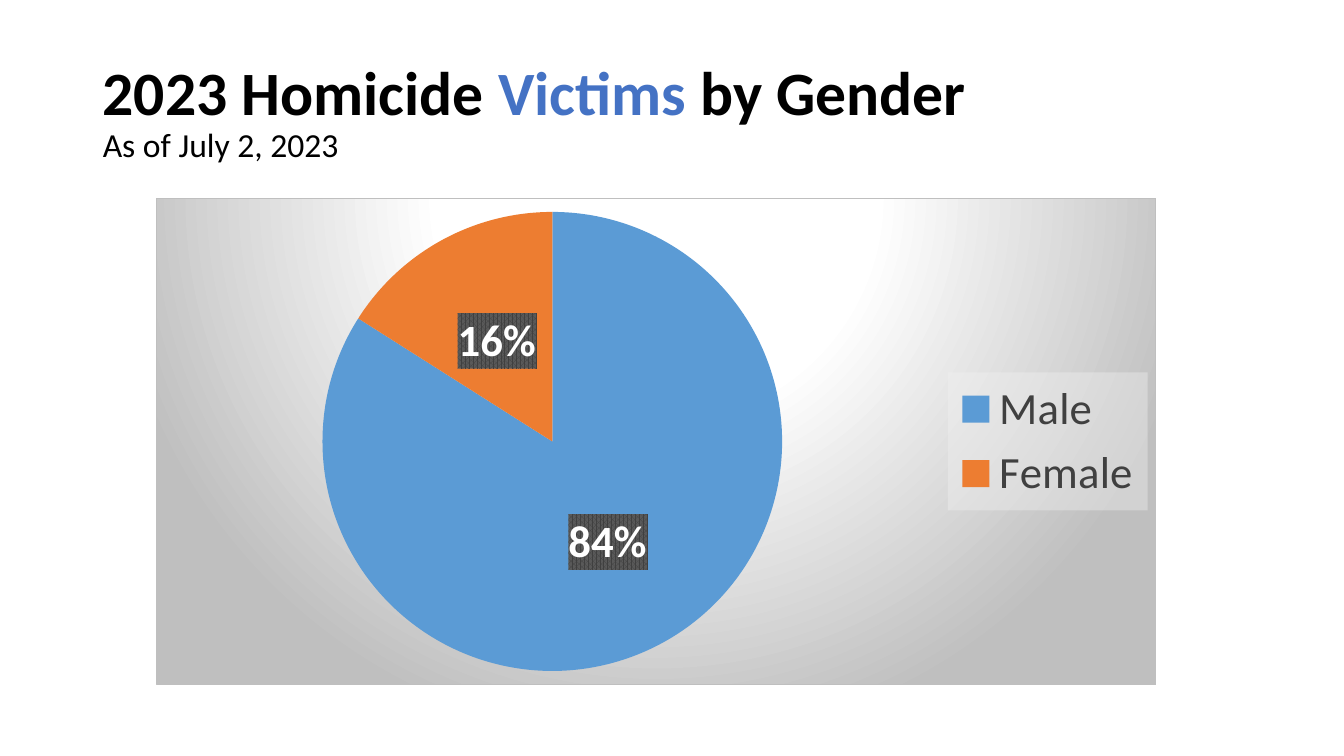
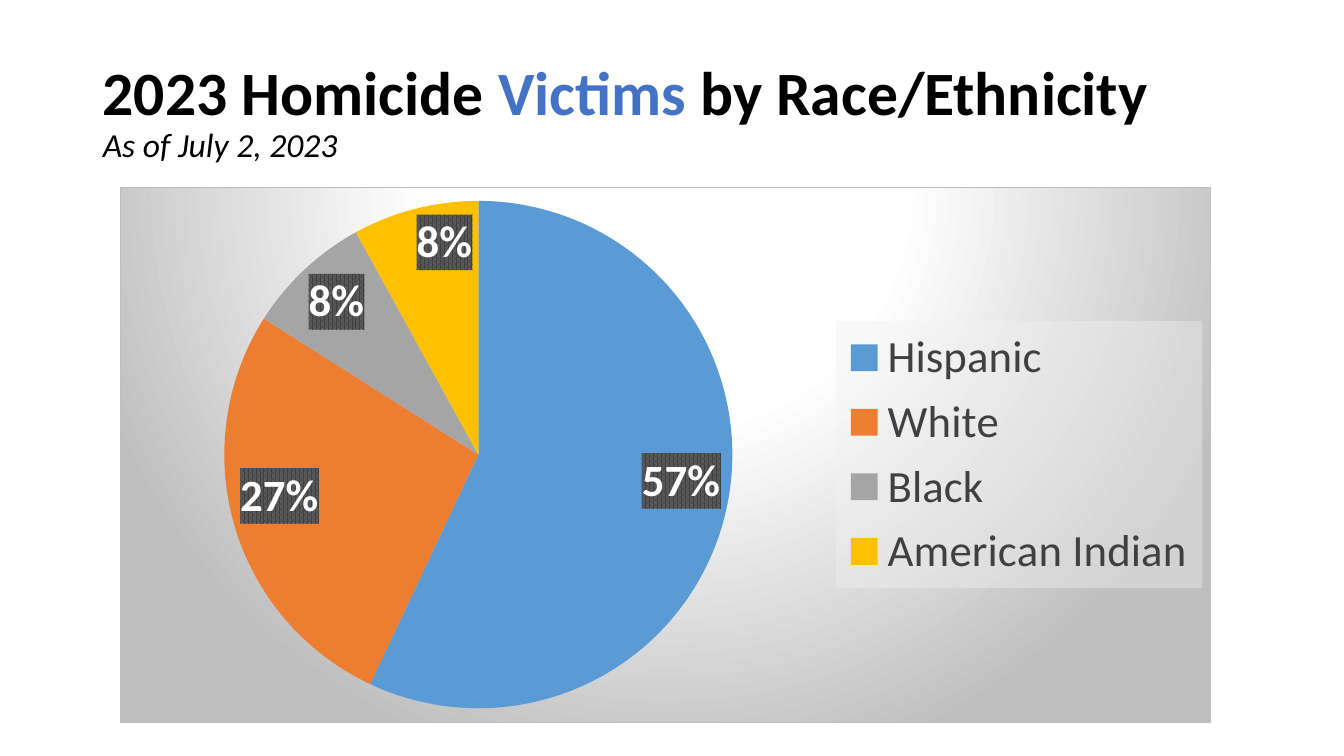
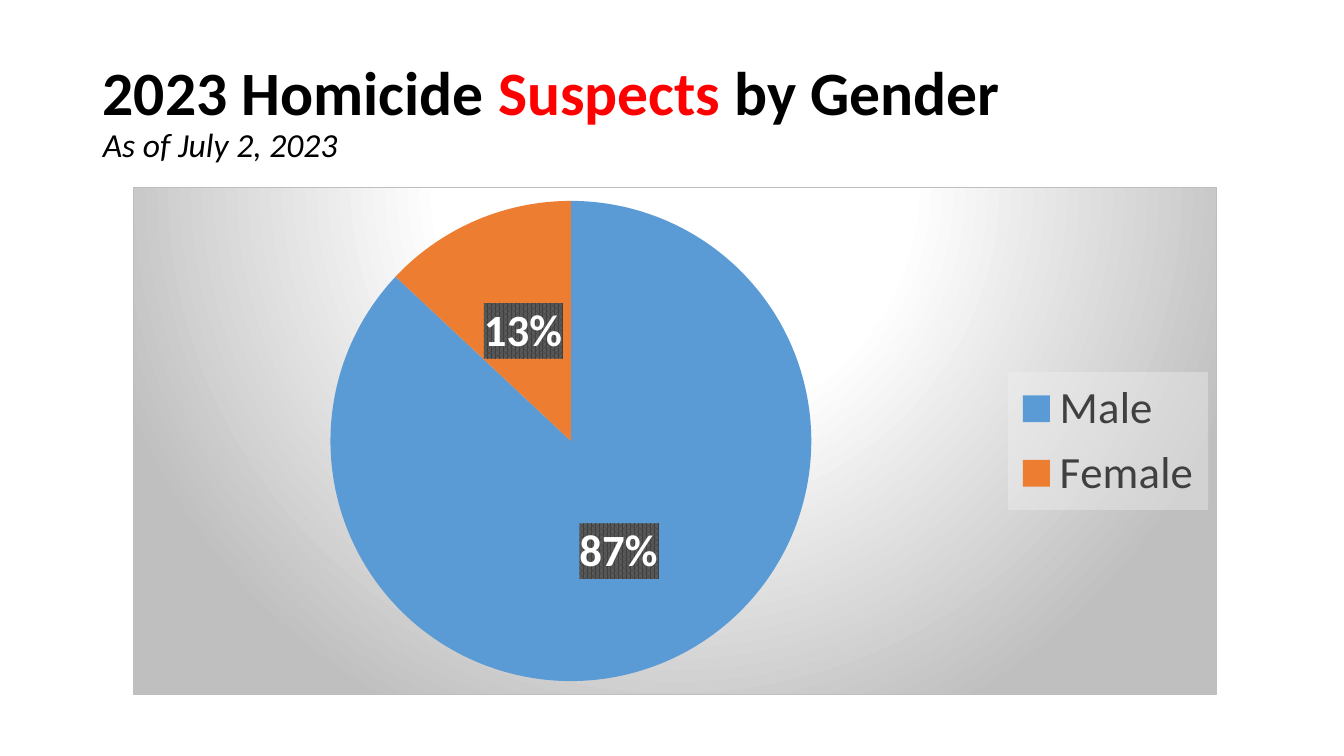
import pptx
import pptx.chart.data
import pptx.dml.color
import pptx.enum.chart
import pptx.enum.text
import pptx.oxml
import pptx.oxml.ns
import pptx.util

FONT = "Calibri"
BLACK, WHITE, LEGEND_TEXT = "000000", "FFFFFF", "404040"
VICTIM_BLUE, SUSPECT_RED = "4472C4", "FF0000"
SLICE_COLORS = ["5B9BD5", "ED7D31", "A5A5A5", "FFC000"]
SLIDE_WIDTH, SLIDE_HEIGHT = pptx.util.Inches(13.33), pptx.util.Inches(7.5)
TITLE_AREA = (6.9, 5.33, 86.27, 19.33)
CENTER = pptx.enum.chart.XL_LABEL_POSITION.CENTER
INSIDE_END = pptx.enum.chart.XL_LABEL_POSITION.INSIDE_END

PANEL_STYLE = """
<a:gradFill rotWithShape="1"><a:gsLst>
  <a:gs pos="0"><a:srgbClr val="FFFFFF"/></a:gs>
  <a:gs pos="39000"><a:srgbClr val="FFFFFF"/></a:gs>
  <a:gs pos="100000"><a:srgbClr val="BFBFBF"/></a:gs>
</a:gsLst><a:path path="circle">
  <a:fillToRect l="50000" t="-80000" r="50000" b="180000"/>
</a:path></a:gradFill>
<a:ln w="9525"><a:solidFill><a:srgbClr val="BFBFBF"/></a:solidFill></a:ln>"""
LEGEND_STYLE = """
<a:solidFill><a:srgbClr val="F2F2F2"><a:alpha val="39000"/></a:srgbClr></a:solidFill>
<a:ln><a:noFill/></a:ln>"""
LABEL_STYLE = """
<a:pattFill prst="pct75">
  <a:fgClr><a:srgbClr val="404040"/></a:fgClr><a:bgClr><a:srgbClr val="595959"/></a:bgClr>
</a:pattFill><a:ln><a:noFill/></a:ln>"""


def rgb(hex_color):
    """Turn a hex string into a colour."""
    return pptx.dml.color.RGBColor.from_string(hex_color)


def place(area):
    """Turn left, top, width and height in percent of the slide into lengths."""
    sides = (SLIDE_WIDTH, SLIDE_HEIGHT) * 2
    return [int(side * share / 100) for side, share in zip(sides, area)]


def set_font(font, size, color, bold=False, italic=False):
    """Set typeface, size, colour and style of a font."""
    font.name = FONT
    font.size = pptx.util.Pt(size)
    font.color.rgb = rgb(color)
    font.bold = bold
    font.italic = italic


def add_style_after(chart, element_path, style):
    """Insert shape properties behind the chart element they belong after."""
    namespaces = pptx.oxml.ns.nsdecls("c", "a")
    properties = pptx.oxml.parse_xml(f"<c:spPr {namespaces}>{style}</c:spPr>")
    tags = [pptx.oxml.ns.qn(tag) for tag in element_path.split("/")]
    chart.element.find(".//" + "/".join(tags)).addnext(properties)


def write_title(slide, group, group_color, topic, italic_date):
    """Fill the title with a coloured group word and a date line."""
    title = slide.shapes.title
    title.left, title.top, title.width, title.height = place(TITLE_AREA)
    frame = title.text_frame
    frame.word_wrap = True
    frame.auto_size = pptx.enum.text.MSO_AUTO_SIZE.NONE
    frame.vertical_anchor = pptx.enum.text.MSO_ANCHOR.MIDDLE
    heading = frame.paragraphs[0]
    heading.alignment = pptx.enum.text.PP_ALIGN.LEFT
    heading.line_spacing = 0.9
    set_font(heading.font, 44, BLACK, bold=True)
    for words, color in [("2023 Homicide ", BLACK), (group, group_color),
                         (f" by {topic}", BLACK)]:
        run = heading.add_run()
        run.text = words
        set_font(run.font, 44, color, bold=True)
    heading.add_line_break()
    date = heading.add_run()
    date.text = "As of July 2, 2023"
    set_font(date.font, 24, BLACK, italic=italic_date)


def add_pie(slide, area, shares, label_position):
    """Add a pie chart with percent labels and a legend on a shaded panel."""
    data = pptx.chart.data.CategoryChartData()
    data.categories = list(shares)
    data.add_series("Series 1", list(shares.values()))
    chart = slide.shapes.add_chart(
        pptx.enum.chart.XL_CHART_TYPE.PIE, *place(area), data).chart
    set_font(chart.font, 10, BLACK)
    chart.has_title = False
    chart.plots[0].vary_by_categories = True

    chart.has_legend = True
    chart.legend.position = pptx.enum.chart.XL_LEGEND_POSITION.RIGHT
    chart.legend.include_in_layout = False
    set_font(chart.legend.font, 32, LEGEND_TEXT)

    pie = chart.plots[0].series[0]
    for index, color in enumerate(SLICE_COLORS[:len(shares)]):
        fill = pie.points[index].format.fill
        fill.solid()
        fill.fore_color.rgb = rgb(color)

    labels = pie.data_labels
    labels.show_value = False
    labels.show_percentage = True
    labels.number_format = "0%"
    labels.number_format_is_linked = False
    labels.position = label_position
    set_font(labels.font, 32, WHITE, bold=True)

    add_style_after(chart, "c:chart", PANEL_STYLE)
    add_style_after(chart, "c:legend/c:overlay", LEGEND_STYLE)
    add_style_after(chart, "c:ser/c:dLbls/c:numFmt", LABEL_STYLE)


def main():
    """Build the three slides and save them."""
    deck = pptx.Presentation()
    deck.slide_width, deck.slide_height = SLIDE_WIDTH, SLIDE_HEIGHT
    pages = [
        (("Victims", VICTIM_BLUE, "Gender", False),
         (11.63, 26.13, 74.42, 64.53), {"Male": 84, "Female": 16}, CENTER),
        (("Victims", VICTIM_BLUE, "Race/Ethnicity", True),
         (8.93, 24.67, 81.17, 70.93),
         {"Hispanic": 57, "White": 27, "Black": 8, "American Indian": 8}, INSIDE_END),
        (("Suspects", SUSPECT_RED, "Gender", True),
         (9.9, 24.67, 80.65, 67.33), {"Male": 87, "Female": 13}, CENTER),
    ]
    for heading, area, shares, label_position in pages:
        slide = deck.slides.add_slide(deck.slide_layouts[5])
        write_title(slide, *heading)
        add_pie(slide, area, shares, label_position)
    deck.save("out.pptx")


if __name__ == "__main__":
    main()
